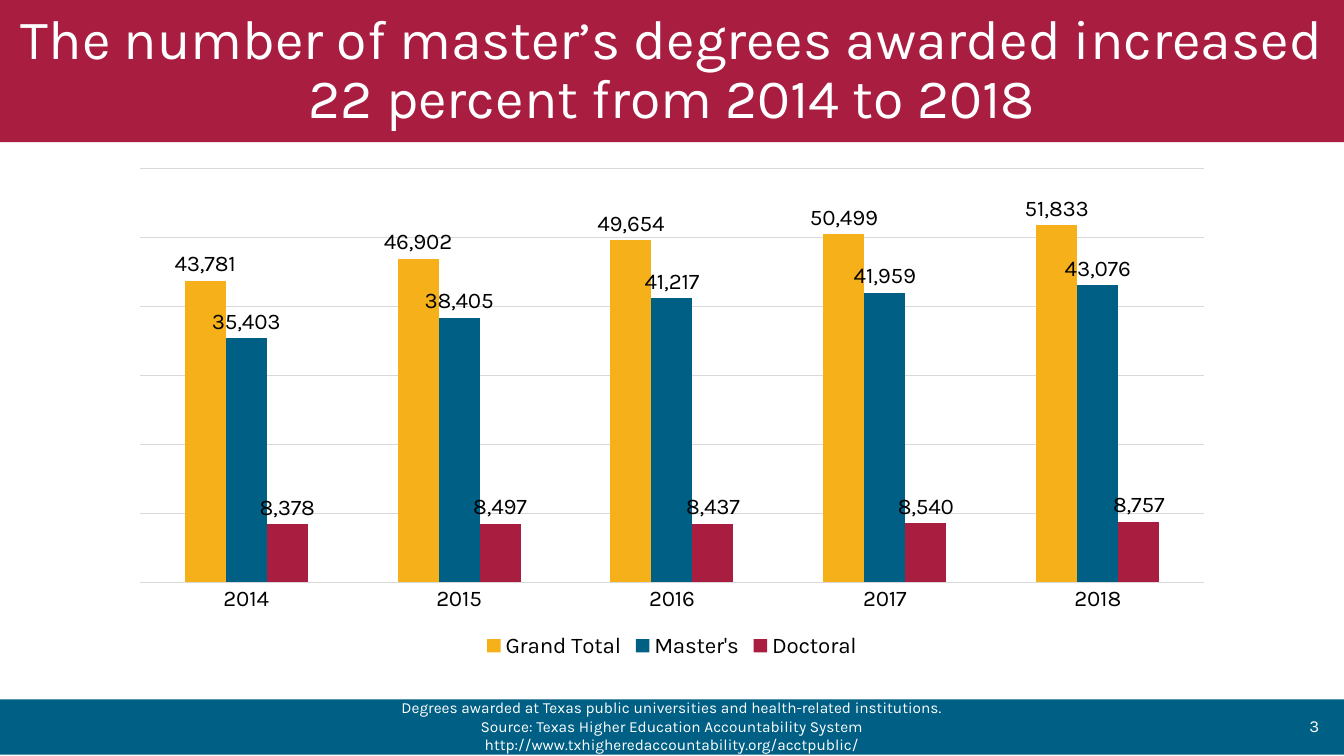
import copy

import pptx
import pptx.chart.data
import pptx.dml.color
import pptx.enum.chart
import pptx.enum.shapes
import pptx.enum.text
import pptx.oxml.ns
import pptx.util

Pt = pptx.util.Pt
ALIGN = pptx.enum.text.PP_ALIGN
qn = pptx.oxml.ns.qn

FONT = "Karla"
WHITE, BLACK, GRAY = "FFFFFF", "000000", "D9D9D9"
GOLD, BLUE, CRIMSON = "F6B11A", "005F84", "A81D40"

YEARS = ["2014", "2015", "2016", "2017", "2018"]
DEGREES = [
    ("Grand Total", GOLD, [43781, 46902, 49654, 50499, 51833]),
    ("Master's", BLUE, [35403, 38405, 41217, 41959, 43076]),
    ("Doctoral", CRIMSON, [8378, 8497, 8437, 8540, 8757]),
]


def rgb(color):
    return pptx.dml.color.RGBColor.from_string(color)


def set_font(font, size, color):
    font.name = FONT
    font.size = Pt(size)
    font.color.rgb = rgb(color)


def set_fill(fill, color):
    fill.solid()
    fill.fore_color.rgb = rgb(color)


def set_line(line, color):
    line.color.rgb = rgb(color)
    line.width = Pt(0.75)


def write_text(shape, paragraphs, size, color=WHITE, align=ALIGN.CENTER, spacing=1.0):
    frame = shape.text_frame
    frame.word_wrap = True
    frame.vertical_anchor = pptx.enum.text.MSO_ANCHOR.MIDDLE
    frame.text = "\n".join(paragraphs)
    for paragraph in frame.paragraphs:
        paragraph.alignment = align
        paragraph.line_spacing = spacing
        set_font(paragraph.font, size, color)


def add_band(slide, top, height, color):
    """Add a full-width coloured rectangle."""
    band = slide.shapes.add_shape(
        pptx.enum.shapes.MSO_SHAPE.RECTANGLE, 0, Pt(top), Pt(960), Pt(height))
    band.shadow.inherit = False
    set_fill(band.fill, color)
    band.line.fill.background()
    return band


def add_text(slide, left, top, width, height, paragraphs, **text_format):
    box = slide.shapes.add_textbox(Pt(left), Pt(top), Pt(width), Pt(height))
    write_text(box, paragraphs, **text_format)


def move_to_right_axis(chart, first_moved):
    """Put the series from index first_moved on into a second plot with hidden axes."""
    left_plot = chart.plots[0]._element
    right_plot = copy.deepcopy(left_plot)
    left_plot.addnext(right_plot)
    for plot, unwanted in ((left_plot, slice(first_moved, None)),
                           (right_plot, slice(0, first_moved))):
        for series in plot.findall(qn("c:ser"))[unwanted]:
            plot.remove(series)

    category_axis = copy.deepcopy(chart.category_axis._element)
    value_axis = copy.deepcopy(chart.value_axis._element)
    chart.value_axis._element.addnext(value_axis)
    value_axis.addnext(category_axis)
    category_axis.find(qn("c:delete")).set("val", "1")
    value_axis.find(qn("c:axPos")).set("val", "r")
    value_axis.find(qn("c:crosses")).set("val", "max")

    category_id, value_id = "50010", "50020"
    for axis, own_id, crossing_id in ((category_axis, category_id, value_id),
                                      (value_axis, value_id, category_id)):
        axis.find(qn("c:axId")).set("val", own_id)
        axis.find(qn("c:crossAx")).set("val", crossing_id)
    for reference, axis_id in zip(right_plot.findall(qn("c:axId")), (category_id, value_id)):
        reference.set("val", axis_id)


def add_degree_chart(slide, left, top, width, height):
    data = pptx.chart.data.CategoryChartData(number_format="#,##0")
    data.categories = YEARS
    for name, _, values in DEGREES:
        data.add_series(name, values)
    chart = slide.shapes.add_chart(
        pptx.enum.chart.XL_CHART_TYPE.COLUMN_CLUSTERED,
        Pt(left), Pt(top), Pt(width), Pt(height), data).chart
    set_font(chart.font, 16, BLACK)
    chart.has_title = False
    chart.has_legend = True
    chart.legend.position = pptx.enum.chart.XL_LEGEND_POSITION.BOTTOM
    chart.legend.include_in_layout = False
    set_font(chart.legend.font, 16, BLACK)

    plot = chart.plots[0]
    plot.gap_width = 219
    plot.overlap = 0
    plot.vary_by_categories = False
    for series, (_, color, _) in zip(plot.series, DEGREES):
        series.invert_if_negative = False
        set_fill(series.format.fill, color)
        labels = series.data_labels
        labels.show_value = True
        labels.number_format = "#,##0"
        labels.number_format_is_linked = False
        labels.position = pptx.enum.chart.XL_LABEL_POSITION.OUTSIDE_END
        set_font(labels.font, 16, BLACK)

    category_axis = chart.category_axis
    category_axis.major_tick_mark = pptx.enum.chart.XL_TICK_MARK.NONE
    set_line(category_axis.format.line, GRAY)
    set_font(category_axis.tick_labels.font, 16, BLACK)

    value_axis = chart.value_axis
    value_axis.visible = False
    value_axis.has_major_gridlines = False
    value_axis.maximum_scale = 60000
    move_to_right_axis(chart, 1)
    value_axis.maximum_scale = None
    value_axis.minimum_scale = 0
    value_axis.has_major_gridlines = True
    set_line(value_axis.major_gridlines.format.line, GRAY)


def main():
    presentation = pptx.Presentation()
    presentation.slide_width = Pt(960)
    presentation.slide_height = Pt(540)
    slide = presentation.slides.add_slide(presentation.slide_layouts[6])

    add_band(slide, 499.5, 39.5, BLUE)
    title = add_band(slide, 0, 101.5, CRIMSON)
    write_text(
        title,
        ["The number of master’s degrees awarded increased 22 percent from 2014 to 2018"],
        size=39.6, spacing=0.9)
    add_text(
        slide, 243.5, 504, 473, 29,
        ["Degrees awarded at Texas public universities and health-related institutions.",
         "Source: Texas Higher Education Accountability System "
         "http://www.txhigheredaccountability.org/acctpublic/"],
        size=11)
    add_text(slide, 733.5, 504, 216, 29, ["3"], size=12, align=ALIGN.RIGHT)
    add_degree_chart(slide, 84, 113.5, 792, 360)
    presentation.save("out.pptx")


if __name__ == "__main__":
    main()
